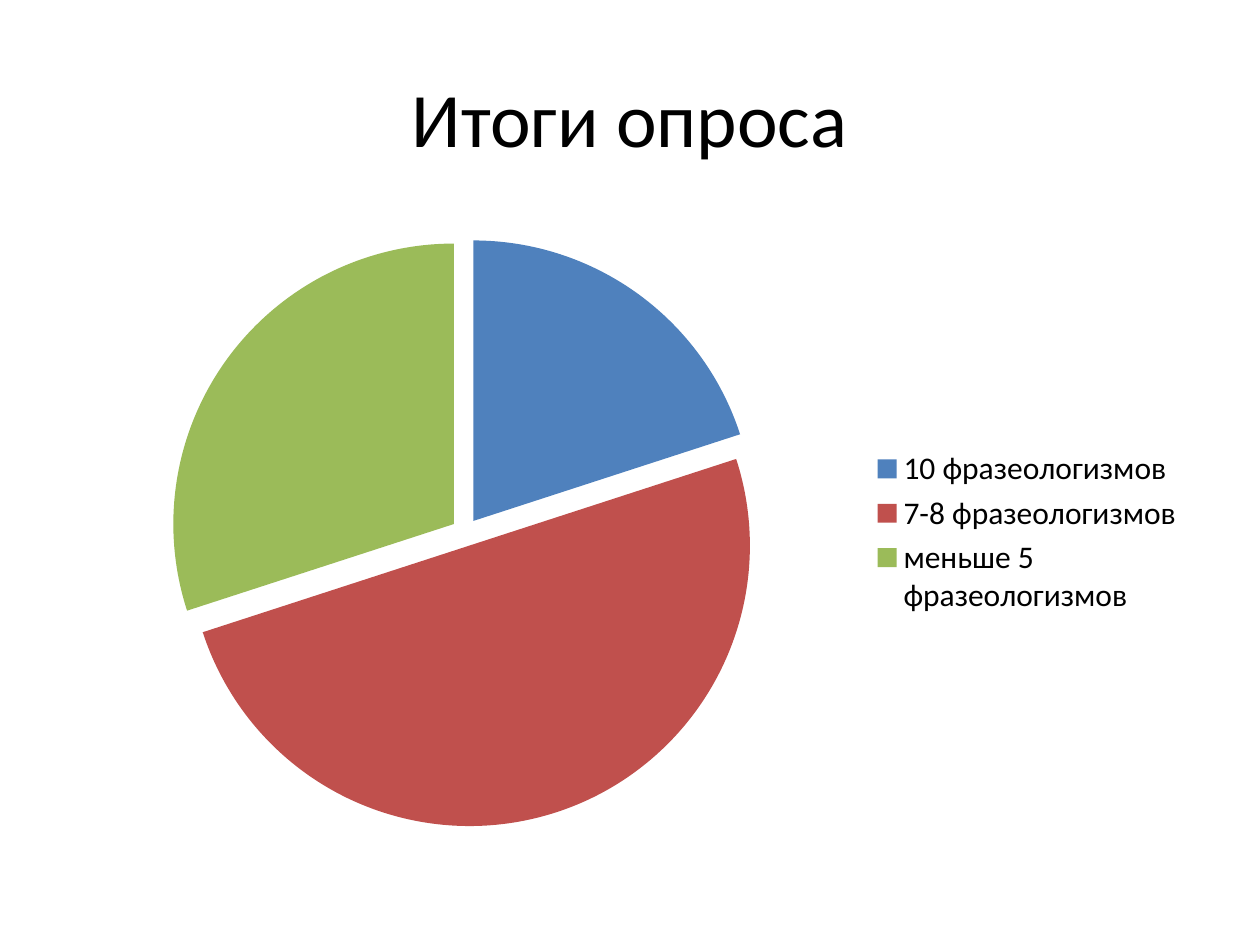
import pptx
import pptx.chart.data
import pptx.dml.color
import pptx.enum.chart
import pptx.enum.text
import pptx.util
from pptx.util import Inches

FONT = "Calibri"
BLACK = "000000"
TITLE = "Итоги опроса"
SERIES_NAME = "Series 1"
EXPLOSION_PERCENT = 5
ANSWERS = [
    ("10 фразеологизмов", 20, "4F81BD"),
    ("7-8 фразеологизмов", 50, "C0504D"),
    ("меньше 5 фразеологизмов", 30, "9BBB59"),
]


def color(code):
    return pptx.dml.color.RGBColor.from_string(code)


def set_font(font, size, code=BLACK):
    font.name = FONT
    font.size = pptx.util.Pt(size)
    font.color.rgb = color(code)


def add_text(page, text, left, top, width, height, size):
    """Add a centred, wrapped text box."""
    box = page.shapes.add_textbox(Inches(left), Inches(top), Inches(width), Inches(height))
    frame = box.text_frame
    frame.word_wrap = True
    frame.vertical_anchor = pptx.enum.text.MSO_ANCHOR.MIDDLE
    para = frame.paragraphs[0]
    para.alignment = pptx.enum.text.PP_ALIGN.CENTER
    span = para.add_run()
    span.text = text
    set_font(span.font, size)


def add_pie(page, answers, left, top, width, height):
    labels, values, fills = zip(*answers)
    data = pptx.chart.data.CategoryChartData()
    data.categories = labels
    data.add_series(SERIES_NAME, values)
    chart = page.shapes.add_chart(
        pptx.enum.chart.XL_CHART_TYPE.PIE_EXPLODED,
        Inches(left), Inches(top), Inches(width), Inches(height), data,
    ).chart
    set_font(chart.font, 18)
    chart.has_title = False
    chart.has_legend = True
    chart.legend.position = pptx.enum.chart.XL_LEGEND_POSITION.RIGHT
    chart.legend.include_in_layout = False

    plot = chart.plots[0]
    plot.vary_by_categories = True
    series = plot.series[0]
    for explosion in series._element.xpath("c:explosion"):
        explosion.set("val", str(EXPLOSION_PERCENT))
    for index, code in enumerate(fills):
        fill = series.points[index].format.fill
        fill.solid()
        fill.fore_color.rgb = color(code)


def main():
    deck = pptx.Presentation()
    deck.slide_width, deck.slide_height = Inches(10), Inches(7.5)
    page = deck.slides.add_slide(deck.slide_layouts[6])
    add_text(page, TITLE, 0.5, 0.3, 9, 1.25, size=44)
    add_pie(page, ANSWERS, 0.5, 1.75, 9, 4.95)
    deck.save("out.pptx")


if __name__ == "__main__":
    main()
